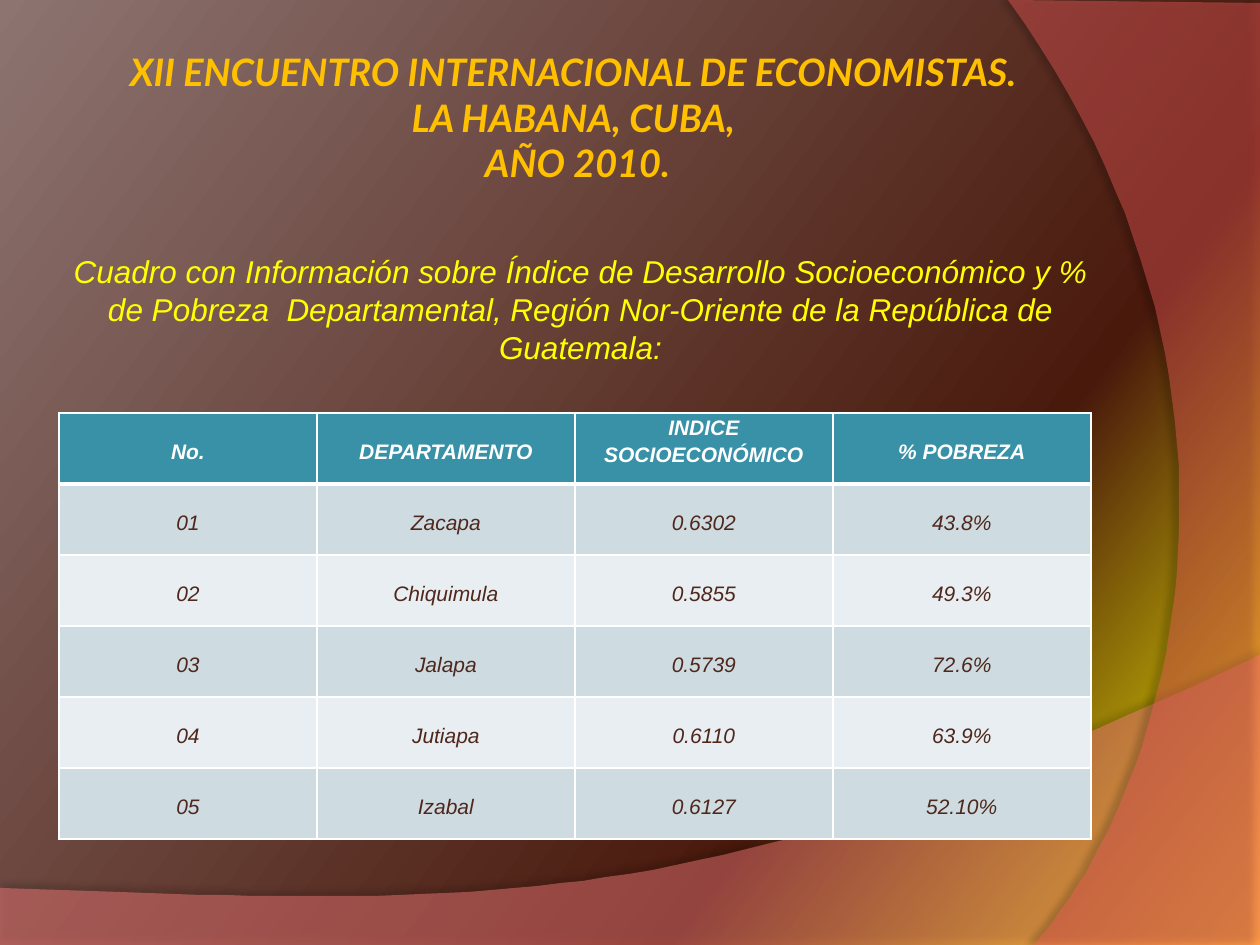
from lxml.etree import SubElement
from pptx import Presentation
from pptx.dml.color import RGBColor
from pptx.enum.text import MSO_ANCHOR as Anchor, PP_ALIGN as Align
from pptx.oxml import parse_xml
from pptx.oxml.ns import nsdecls, qn
from pptx.util import Pt

EMU_PER_INCH, PX_PER_INCH = 914400, 126
WIDTH, HEIGHT = 1260, 945


def px(length):
    return round(length * EMU_PER_INCH / PX_PER_INCH)


def color(value):
    return RGBColor.from_string(value)


def curve(start, first, second, end, steps=48):
    points = []
    for step in range(steps + 1):
        t = step / steps
        weights = ((1 - t) ** 3, 3 * t * (1 - t) ** 2, 3 * t * t * (1 - t), t ** 3)
        points.append(tuple(
            round(sum(weight * value for weight, value in zip(weights, axis)))
            for axis in zip(start, first, second, end)))
    return points


class SlideBuilder:
    title_font, body_font = "Lato", "Arial"
    border, header_fill, header_text = "FFFFFF", "3891A7", "FFFFFF"
    body_text, bands = "4F271C", ("CEDCE1", "E8EEF1")

    def __init__(self, deck):
        self.slide = deck.slides.add_slide(deck.slide_layouts[6])

    def background(self, stops, angle):
        self.slide.background.fill.gradient()
        gradient = self.slide.element.find(".//" + qn("a:gradFill"))
        stop_list = "".join(
            f'<a:gs pos="{place * 1000}"><a:srgbClr val="{value}"/></a:gs>'
            for place, value in stops)
        gradient.getparent().replace(gradient, parse_xml(
            f'<a:gradFill {nsdecls("a")} rotWithShape="1"><a:gsLst>{stop_list}</a:gsLst>'
            f'<a:lin ang="{angle * 60000}" scaled="0"/></a:gradFill>'))

    def wave(self, points, fill, opacity, shadow_opacity, distance, direction):
        builder = self.slide.shapes.build_freeform(*points[0], scale=px(100) / 100)
        builder.add_line_segments(points[1:], close=True)
        shape = builder.convert_to_shape()
        shape.fill.solid()
        shape.fill.fore_color.rgb = color(fill)
        properties = shape.element.spPr
        rgb = properties.find(qn("a:solidFill")).find(qn("a:srgbClr"))
        SubElement(rgb, qn("a:alpha"), val=str(opacity * 1000))
        shape.line.fill.background()
        shape.shadow.inherit = False
        properties.find(qn("a:effectLst")).append(parse_xml(
            f'<a:outerShdw {nsdecls("a")} blurRad="{Pt(4)}" dist="{Pt(distance)}" '
            f'dir="{direction * 60000}" algn="ctr" rotWithShape="0"><a:srgbClr val="000000">'
            f'<a:alpha val="{shadow_opacity * 1000}"/></a:srgbClr></a:outerShdw>'))

    def fill_text(self, frame, text, size, font, value, bold=False):
        para = frame.paragraphs[0]
        para.text = text
        para.alignment = Align.CENTER
        for span in para.runs:
            span.font.size = Pt(size)
            span.font.name = font
            span.font.bold = bold
            span.font.italic = True
            span.font.color.rgb = color(value)
        return para

    def text(self, place, text, size, font, value, bold=False, anchor=Anchor.TOP, inset=13):
        box = self.slide.shapes.add_textbox(*map(px, place))
        frame = box.text_frame
        frame.word_wrap = True
        frame.vertical_anchor = anchor
        frame.margin_left = frame.margin_right = px(inset)
        frame.margin_top = frame.margin_bottom = px(6)
        self.fill_text(frame, text, size, font, value, bold)

    def borders(self, cell, top, bottom):
        properties = cell._tc.get_or_add_tcPr()
        for side, width in (("L", 1), ("R", 1), ("T", top), ("B", bottom)):
            line = SubElement(properties, qn(f"a:ln{side}"), w=str(Pt(width)))
            SubElement(SubElement(line, qn("a:solidFill")), qn("a:srgbClr"), val=self.border)

    def table(self, left, top, column_width, row_height, rows):
        columns = len(rows[0])
        grid = self.slide.shapes.add_table(
            len(rows), columns, px(left), px(top),
            px(column_width * columns), px(row_height * len(rows))).table
        for column in grid.columns:
            column.width = px(column_width)
        for index, values in enumerate(rows):
            grid.rows[index].height = px(row_height)
            header = index == 0
            for cell, text in zip(grid.rows[index].cells, values):
                self.borders(cell, 3 if index == 1 else 1, 3 if header else 1)
                cell.fill.solid()
                cell.fill.fore_color.rgb = color(
                    self.header_fill if header else self.bands[(index - 1) % 2])
                cell.vertical_anchor = Anchor.TOP
                cell.margin_left = cell.margin_right = px(9)
                cell.margin_top = px(0 if " SOCIO" in text else 24)
                cell.margin_bottom = 0
                para = self.fill_text(cell.text_frame, text, 12, self.body_font,
                                      self.header_text if header else self.body_text, header)
                para.line_spacing = 1.15


def main():
    deck = Presentation()
    deck.slide_width, deck.slide_height = px(WIDTH), px(HEIGHT)
    page = SlideBuilder(deck)
    page.background([(0, "FFFF00"), (30, "49190C"), (100, "8D7471")], 217)

    bottom_edge = curve((WIDTH, 655), (704, 919), (493, 906), (0, 888))
    page.wave([(0, HEIGHT), (WIDTH, HEIGHT)] + bottom_edge, "FF7F7F", 45, 35, 3.5, 270)
    right_edge = curve((1034, HEIGHT), (1178, 780), (1283, 378), (1008, 0))
    page.wave([(WIDTH, 3), (WIDTH, HEIGHT)] + right_edge, "FF5E5E", 40, 45, 4, 180)

    page.text((63, 38, 1029, 158),
              "XII ENCUENTRO INTERNACIONAL DE ECONOMISTAS. \nLA HABANA, CUBA, \nAÑO 2010.",
              21.6, page.title_font, "FFC000", bold=True, anchor=Anchor.MIDDLE, inset=6)
    page.table(59, 413, 258, 71, [
        ("No.", "DEPARTAMENTO", "INDICE SOCIOECONÓMICO", "% POBREZA"),
        ("01", "Zacapa", "0.6302", "43.8%"),
        ("02", "Chiquimula", "0.5855", "49.3%"),
        ("03", "Jalapa", "0.5739", "72.6%"),
        ("04", "Jutiapa", "0.6110", "63.9%"),
        ("05", "Izabal", "0.6127", "52.10%"),
    ])
    page.text((59, 246, 1043, 127),
              "Cuadro con Información sobre Índice de Desarrollo Socioeconómico y % de Pobreza  "
              "Departamental, Región Nor-Oriente de la República de Guatemala:",
              18, page.body_font, "FFFF00")
    deck.save("out.pptx")


if __name__ == "__main__":
    main()
